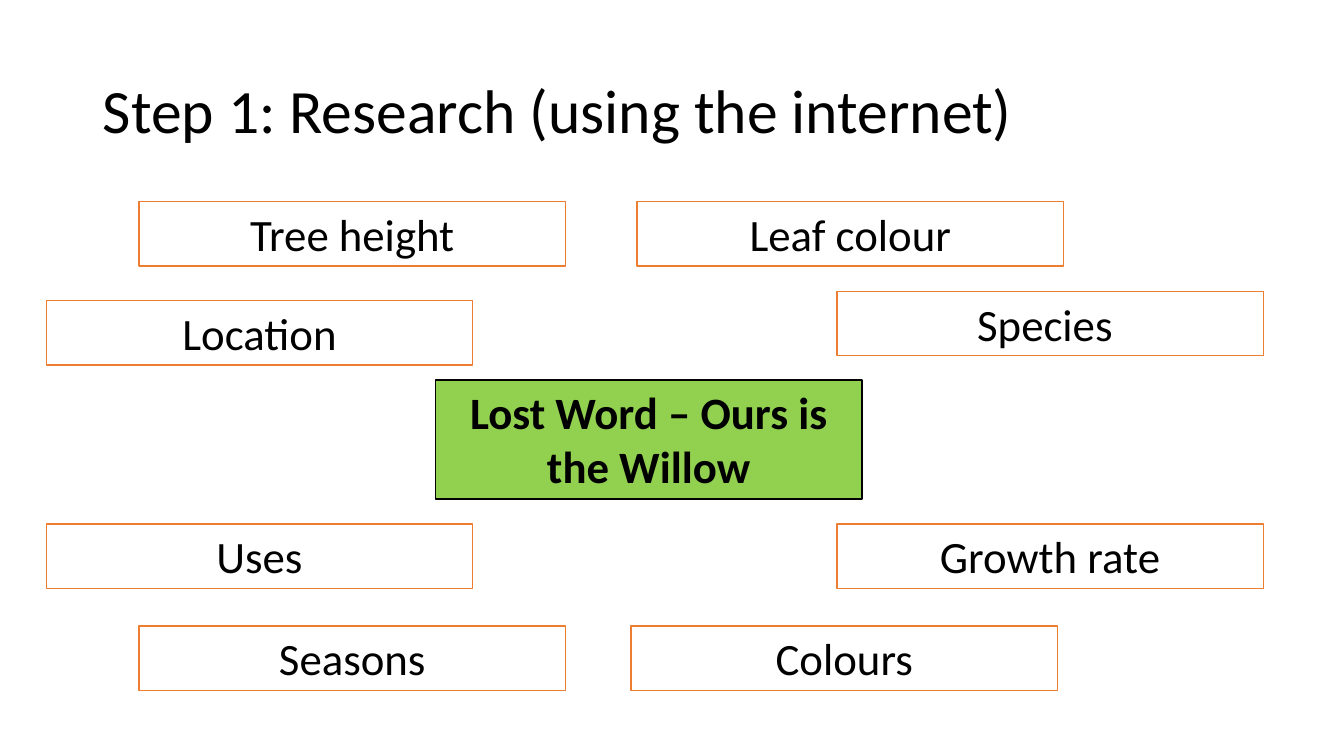
from pptx import Presentation
from pptx.dml.color import RGBColor
from pptx.enum.shapes import MSO_SHAPE
from pptx.enum.text import MSO_ANCHOR, MSO_AUTO_SIZE, PP_ALIGN
from pptx.util import Inches, Pt

BLACK = RGBColor(0x00, 0x00, 0x00)
WHITE = RGBColor(0xFF, 0xFF, 0xFF)
GREEN = RGBColor(0x92, 0xD0, 0x50)
ORANGE = RGBColor(0xED, 0x7D, 0x31)

BOX_WIDTH = 4.23
TOPIC_HEIGHT = 0.64
OUTER_LEFT, INNER_LEFT, OUTER_RIGHT = 0.46, 1.38, 8.3
TOP_ROW, USES_ROW, BOTTOM_ROW = 2, 5.2, 6.21

TOPICS = [
    ("Tree height", INNER_LEFT, TOP_ROW),
    ("Leaf colour", 6.32, TOP_ROW),
    ("Location", OUTER_LEFT, 2.98),
    ("Species ", OUTER_RIGHT, 2.89),
    ("Growth rate", OUTER_RIGHT, USES_ROW),
    ("Uses", OUTER_LEFT, USES_ROW),
    ("Seasons", INNER_LEFT, BOTTOM_ROW),
    ("Colours", 6.26, BOTTOM_ROW),
]


class MindMap:
    """Draws a titled mind map in one style on one slide."""

    def __init__(self, slide):
        self.slide = slide
        self.font = {"name": "Calibri", "size": Pt(32), "bold": False}

    def apply(self, target, values):
        for key, value in values.items():
            setattr(target, key, value)

    def label(self, frame, text, align, **font):
        frame.text = text
        paragraph = frame.paragraphs[0]
        paragraph.alignment = align
        self.apply(paragraph.font, {**self.font, **font})
        paragraph.font.color.rgb = BLACK
        return paragraph

    def title(self, text, left, top, width, height):
        heading = self.slide.shapes.title
        self.apply(heading, {"left": Inches(left), "top": Inches(top),
                             "width": Inches(width), "height": Inches(height)})
        self.apply(heading.text_frame, {"word_wrap": True,
                                        "auto_size": MSO_AUTO_SIZE.NONE,
                                        "vertical_anchor": MSO_ANCHOR.MIDDLE})
        line = self.label(heading.text_frame, text, PP_ALIGN.LEFT, size=Pt(44))
        line.line_spacing = 0.9

    def box(self, text, left, top, height=TOPIC_HEIGHT, fill=WHITE, border=ORANGE, **font):
        box = self.slide.shapes.add_shape(
            MSO_SHAPE.RECTANGLE, Inches(left), Inches(top), Inches(BOX_WIDTH), Inches(height))
        box.shadow.inherit = False
        box.fill.solid()
        box.fill.fore_color.rgb = fill
        box.line.color.rgb = border
        box.line.width = Pt(1)
        self.apply(box.text_frame, {"word_wrap": True,
                                    "auto_size": MSO_AUTO_SIZE.SHAPE_TO_FIT_TEXT,
                                    "vertical_anchor": MSO_ANCHOR.TOP})
        self.label(box.text_frame, text, PP_ALIGN.CENTER, **font)


def main():
    deck = Presentation()
    deck.slide_width, deck.slide_height = Inches(13.33), Inches(7.5)
    mind_map = MindMap(deck.slides.add_slide(deck.slide_layouts.get_by_name("Title Only")))
    mind_map.title("Step 1: Research (using the internet)", 0.92, 0.4, 11.5, 1.45)
    mind_map.box("Lost Word – Ours is the Willow", 4.32, 3.77, 1.18, GREEN, BLACK, bold=True)
    for topic, left, top in TOPICS:
        mind_map.box(topic, left, top)
    deck.save("out.pptx")


if __name__ == "__main__":
    main()
